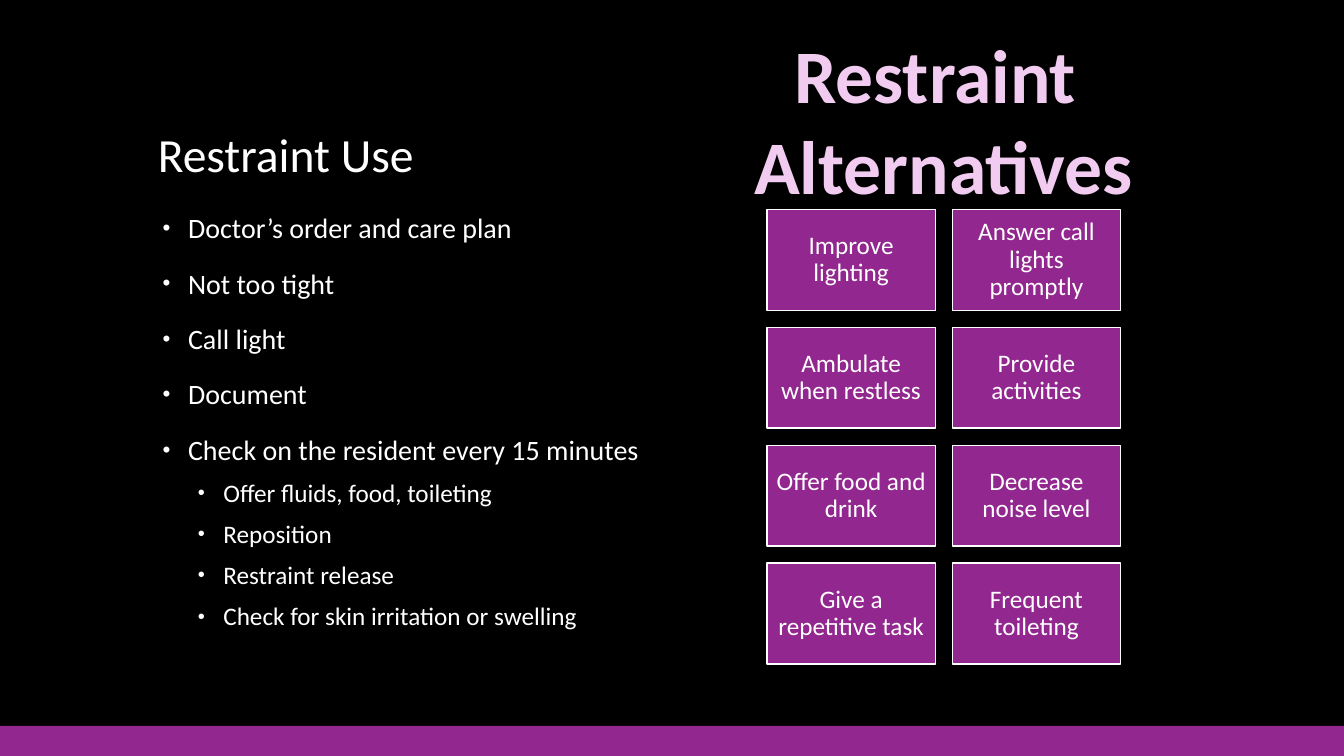
import pptx
import pptx.dml.color
import pptx.enum.shapes
import pptx.enum.text
import pptx.oxml
import pptx.oxml.ns
import pptx.util

Cm = pptx.util.Cm
Pt = pptx.util.Pt
ANCHOR = pptx.enum.text.MSO_ANCHOR
ALIGN = pptx.enum.text.PP_ALIGN

COLORS = {"background": "000000", "purple": "92278F", "text": "FFFFFF", "pink": "F1CCF0"}
FONT = "Calibri"
SLIDE_WIDTH, SLIDE_HEIGHT = 33.87, 19.05
BAR_HEIGHT = 0.76

RESTRAINT_USE = [
    ("Doctor’s order and care plan", 0),
    ("Not too tight", 0),
    ("Call light", 0),
    ("Document", 0),
    ("Check on the resident every 15 minutes", 0),
    ("Offer fluids, food, toileting", 1),
    ("Reposition", 1),
    ("Restraint release", 1),
    ("Check for skin irritation or swelling", 1),
]
BULLET_LEVELS = [
    {"size": 20, "before": 18, "indent": 0.76},
    {"size": 18, "before": 10, "indent": 1.65},
]
ALTERNATIVES = [
    ["Improve lighting", "Answer call lights promptly"],
    ["Ambulate when restless", "Provide activities"],
    ["Offer food and drink", "Decrease noise level"],
    ["Give a repetitive task", "Frequent toileting"],
]


def rgb(name):
    """Return the named colour."""
    return pptx.dml.color.RGBColor.from_string(COLORS[name])


def format_runs(paragraph, size, color="text", bold=False):
    """Set the font of every run in a paragraph."""
    for run in paragraph.runs:
        run.font.name = FONT
        run.font.size = Pt(size)
        run.font.bold = bold
        run.font.color.rgb = rgb(color)


def add_text_box(slide, box, text, wrap=True):
    """Add a text box and return its text frame."""
    text_frame = slide.shapes.add_textbox(*map(Cm, box)).text_frame
    text_frame.word_wrap = wrap
    text_frame.text = text
    return text_frame


def add_rectangle(slide, box):
    """Add a flat purple rectangle without a line."""
    shape = slide.shapes.add_shape(pptx.enum.shapes.MSO_SHAPE.RECTANGLE, *map(Cm, box))
    shape.shadow.inherit = False
    shape.fill.solid()
    shape.fill.fore_color.rgb = rgb("purple")
    shape.line.fill.background()
    return shape


def set_bullet(paragraph, indent):
    """Give a paragraph a small hanging bullet."""
    properties = paragraph._p.get_or_add_pPr()
    properties.set("marL", str(Cm(indent)))
    properties.set("indent", str(-Cm(0.64)))
    namespace = pptx.oxml.ns.nsdecls("a")
    for tag in ('buSzPct val="80000"', 'buFont typeface="Arial"', 'buChar char="•"'):
        properties.append(pptx.oxml.parse_xml(f"<a:{tag} {namespace}/>"))


def add_title(slide, box):
    """Place the slide title at the bottom of its box."""
    text_frame = add_text_box(slide, box, "Restraint Use")
    text_frame.vertical_anchor = ANCHOR.BOTTOM
    paragraph = text_frame.paragraphs[0]
    paragraph.line_spacing = 0.9
    format_runs(paragraph, 34)


def add_bullet_list(slide, box):
    """Place the two-level list on restraint use."""
    text_frame = add_text_box(slide, box, "\n".join(text for text, _ in RESTRAINT_USE))
    for paragraph, (_, level) in zip(text_frame.paragraphs, RESTRAINT_USE):
        style = BULLET_LEVELS[level]
        paragraph.level = level
        paragraph.line_spacing = 0.9
        paragraph.space_before = Pt(style["before"])
        set_bullet(paragraph, style["indent"])
        format_runs(paragraph, style["size"])


def add_alternative_grid(slide, box, gap=0.43):
    """Fill the box with an even grid of alternatives."""
    left, top, width, height = box
    rows, columns = len(ALTERNATIVES), len(ALTERNATIVES[0])
    tile_width = (width - gap * (columns - 1)) / columns
    tile_height = (height - gap * (rows - 1)) / rows
    for row, texts in enumerate(ALTERNATIVES):
        for column, text in enumerate(texts):
            tile_left = left + column * (tile_width + gap)
            tile_top = top + row * (tile_height + gap)
            tile = add_rectangle(slide, (tile_left, tile_top, tile_width, tile_height))
            tile.line.color.rgb = rgb("text")
            tile.line.width = Pt(1)
            text_frame = tile.text_frame
            text_frame.word_wrap = True
            text_frame.vertical_anchor = ANCHOR.MIDDLE
            for side in ("left", "top", "right", "bottom"):
                setattr(text_frame, f"margin_{side}", Cm(0.18))
            text_frame.text = text
            paragraph = text_frame.paragraphs[0]
            paragraph.alignment = ALIGN.CENTER
            paragraph.line_spacing = 0.9
            format_runs(paragraph, 18)


def add_alternatives_heading(slide, box):
    """Place the large pink heading above the grid."""
    text_frame = add_text_box(slide, box, "Restraint \nAlternatives", wrap=False)
    text_frame.auto_size = pptx.enum.text.MSO_AUTO_SIZE.SHAPE_TO_FIT_TEXT
    for paragraph in text_frame.paragraphs:
        paragraph.alignment = ALIGN.CENTER
        format_runs(paragraph, 54, "pink", bold=True)


def main():
    """Build and save the slide."""
    presentation = pptx.Presentation()
    presentation.slide_width = Cm(SLIDE_WIDTH)
    presentation.slide_height = Cm(SLIDE_HEIGHT)
    slide = presentation.slides.add_slide(presentation.slide_layouts[6])
    slide.background.fill.solid()
    slide.background.fill.fore_color.rgb = rgb("background")
    add_rectangle(slide, (0, SLIDE_HEIGHT - BAR_HEIGHT, SLIDE_WIDTH, BAR_HEIGHT))
    add_title(slide, (3.73, 1.3, 26.42, 3.43))
    add_bullet_list(slide, (3.73, 5.28, 12.7, 11.46))
    add_alternative_grid(slide, (19.33, 5.28, 8.91, 11.45))
    add_alternatives_heading(slide, (18.69, 0.58, 10.19, 4.88))
    presentation.save("out.pptx")


if __name__ == "__main__":
    main()
